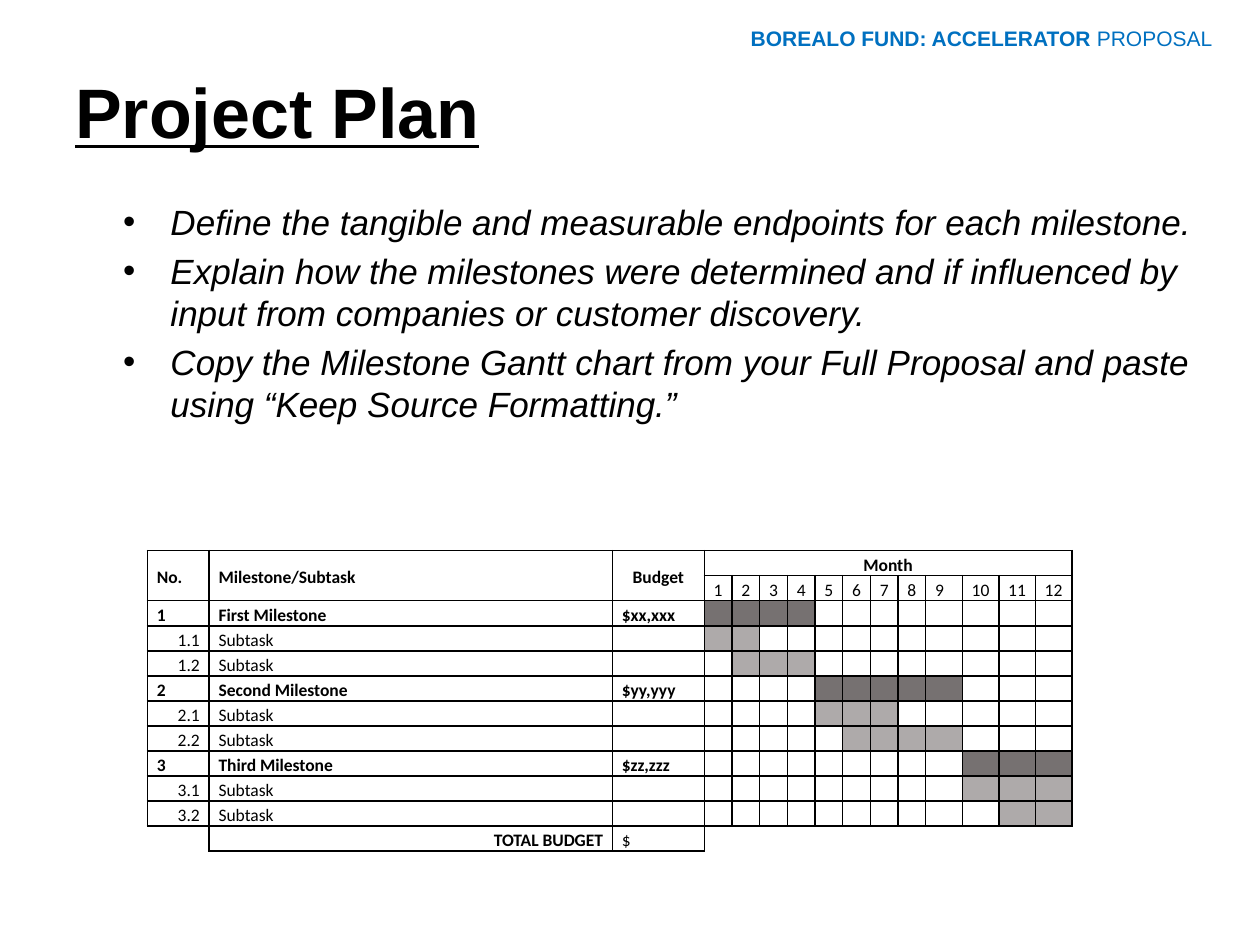
from lxml.etree import SubElement as Sub
from pptx import Presentation
from pptx.dml.color import RGBColor
from pptx.enum.text import MSO_ANCHOR as Anchor, PP_ALIGN as Align
from pptx.oxml.ns import qn
from pptx.util import Inches, Pt

COLS, ROWS = 100, 75
BLACK, BLUE, WHITE = "000000", "0070C0", "FFFFFF"
DARK, LIGHT = "767171", "AEAAAA"
MONTHS, LEAD = 12, 3
WIDTHS = [4.9, 32, 7.3] + [2.2] * 8 + [2.9] * 4

POINTS = [
    "Define the tangible and measurable endpoints for each milestone.",
    "Explain how the milestones were determined and if influenced by input from companies or customer discovery.",
    "Copy the Milestone Gantt chart from your Full Proposal and paste using “Keep Source Formatting.”",
]
HEADS = [("No.", Align.JUSTIFY), ("Milestone/Subtask", Align.JUSTIFY), ("Budget", Align.CENTER)]
TASKS = [
    ("1", "First Milestone", "$xx,xxx", 1, 4),
    ("1.1", "Subtask", "", 1, 2),
    ("1.2", "Subtask", "", 2, 4),
    ("2", "Second Milestone", "$yy,yyy", 5, 9),
    ("2.1", "Subtask", "", 5, 7),
    ("2.2", "Subtask", "", 6, 9),
    ("3", "Third Milestone", "$zz,zzz", 10, 12),
    ("3.1", "Subtask", "", 10, 12),
    ("3.2", "Subtask", "", 11, 12),
]


def color(code):
    return RGBColor.from_string(code)


class Deck:
    face = "Arial"
    grid = "Calibri"
    small = 10
    lead = 1.18

    def __init__(self):
        self.prs = Presentation()
        self.prs.slide_width, self.prs.slide_height = Inches(10), Inches(7.5)
        self.slide = self.prs.slides.add_slide(self.prs.slide_layouts[6])

    def x(self, cols):
        return round(self.prs.slide_width * cols / COLS)

    def y(self, rows):
        return round(self.prs.slide_height * rows / ROWS)

    def style(self, run, size, face, code=BLACK, bold=False, italic=False, under=False):
        font = run.font
        font.size, font.name = Pt(size), face
        font.bold, font.italic, font.underline = bold, italic, under
        font.color.rgb = color(code)

    def frame(self, left, top, width, height):
        box = self.slide.shapes.add_textbox(self.x(left), self.y(top), self.x(width), self.y(height))
        box.text_frame.word_wrap = True
        return box.text_frame

    def title(self, text, *place):
        frame = self.frame(*place)
        frame.vertical_anchor = Anchor.MIDDLE
        frame.text = text
        self.style(frame.paragraphs[0].runs[0], 40, self.face, bold=True, under=True)

    def banner(self, strong, plain, *place):
        para = self.frame(*place).paragraphs[0]
        para.alignment, para.space_before = Align.CENTER, Pt(2.4)
        for text, bold in ((strong, True), (plain, False)):
            run = para.add_run()
            run.text = text
            self.style(run, 12, self.face, BLUE, bold)

    def bullets(self, lines, *place):
        frame = self.frame(*place)
        frame.text = "\n".join(lines)
        for para in frame.paragraphs:
            para.space_before = Pt(4)
            props = para._p.get_or_add_pPr()
            props.set("marL", str(self.x(3.75)))
            props.set("indent", str(-self.x(3.75)))
            Sub(props, qn("a:buFont"), typeface="Arial")
            Sub(props, qn("a:buChar"), char="•")
            self.style(para.runs[0], 20, self.face, italic=True)

    def table(self, left, top, widths, count, high):
        shape = self.slide.shapes.add_table(
            count, len(widths), self.x(left), self.y(top), self.x(sum(widths)), self.y(high * count))
        table = shape.table
        table.first_row = table.horz_banding = False
        for col, width in zip(table.columns, widths):
            col.width = self.x(width)
        for row in table.rows:
            row.height = self.y(high)
        return table

    def cell(self, cell, text="", align=Align.JUSTIFY, bold=False, fill=None, sides="LRTB", mid=False):
        cell.margin_left = cell.margin_right = self.x(0.75)
        cell.margin_top = cell.margin_bottom = 0
        cell.vertical_anchor = Anchor.MIDDLE if mid else Anchor.TOP
        props = cell._tc.get_or_add_tcPr()
        for side in "LRTB":
            line = Sub(props, qn(f"a:ln{side}"), w=str(Pt(1)))
            if side in sides:
                Sub(Sub(line, qn("a:solidFill")), qn("a:srgbClr"), val=BLACK)
            else:
                Sub(line, qn("a:noFill"))
        if fill:
            cell.fill.solid()
            cell.fill.fore_color.rgb = color(fill)
        else:
            cell.fill.background()
        para = cell.text_frame.paragraphs[0]
        para.alignment, para.line_spacing = align, self.lead
        if text:
            para.text = text
            self.style(para.runs[0], self.small, self.grid, bold=bold)
        else:
            Sub(para._p, qn("a:endParaRPr"), sz=str(self.small * 100))

    def gantt(self, left, top):
        last = len(TASKS) + 2
        table = self.table(left, top, WIDTHS, last + 1, 1.99)
        for col, (text, align) in enumerate(HEADS):
            self.cell(table.cell(0, col), text, align, True, mid=True)
            self.cell(table.cell(1, col))
            table.cell(0, col).merge(table.cell(1, col))
        for month in range(1, MONTHS + 1):
            col = LEAD + month - 1
            self.cell(table.cell(0, col), "Month" if month == 1 else "", Align.CENTER, True)
            self.cell(table.cell(1, col), str(month))
            self.cell(table.cell(last, col), fill=WHITE, sides="LT" if month == 1 else "T")
        table.cell(0, LEAD).merge(table.cell(0, LEAD + MONTHS - 1))
        for row, (num, name, cost, start, end) in enumerate(TASKS, 2):
            main = "." not in num
            self.cell(table.cell(row, 0), num, Align.JUSTIFY if main else Align.RIGHT, main)
            self.cell(table.cell(row, 1), name, bold=main)
            self.cell(table.cell(row, 2), cost, bold=main)
            for month in range(1, MONTHS + 1):
                shade = DARK if main else LIGHT
                self.cell(table.cell(row, LEAD + month - 1), fill=shade if start <= month <= end else None)
        self.cell(table.cell(last, 0), sides="TR")
        self.cell(table.cell(last, 1), "TOTAL BUDGET", Align.RIGHT, True)
        self.cell(table.cell(last, 2), "$")


def main():
    deck = Deck()
    deck.title("Project Plan", 5, 4.2, 90, 9.2)
    deck.gantt(11.7, 43.7)
    deck.bullets(POINTS, 8.8, 15.4, 87, 23.2)
    deck.banner("BOREALO FUND: ACCELERATOR ", "PROPOSAL", 55.8, 1.5, 44.2, 3)
    deck.prs.save("out.pptx")


if __name__ == "__main__":
    main()
